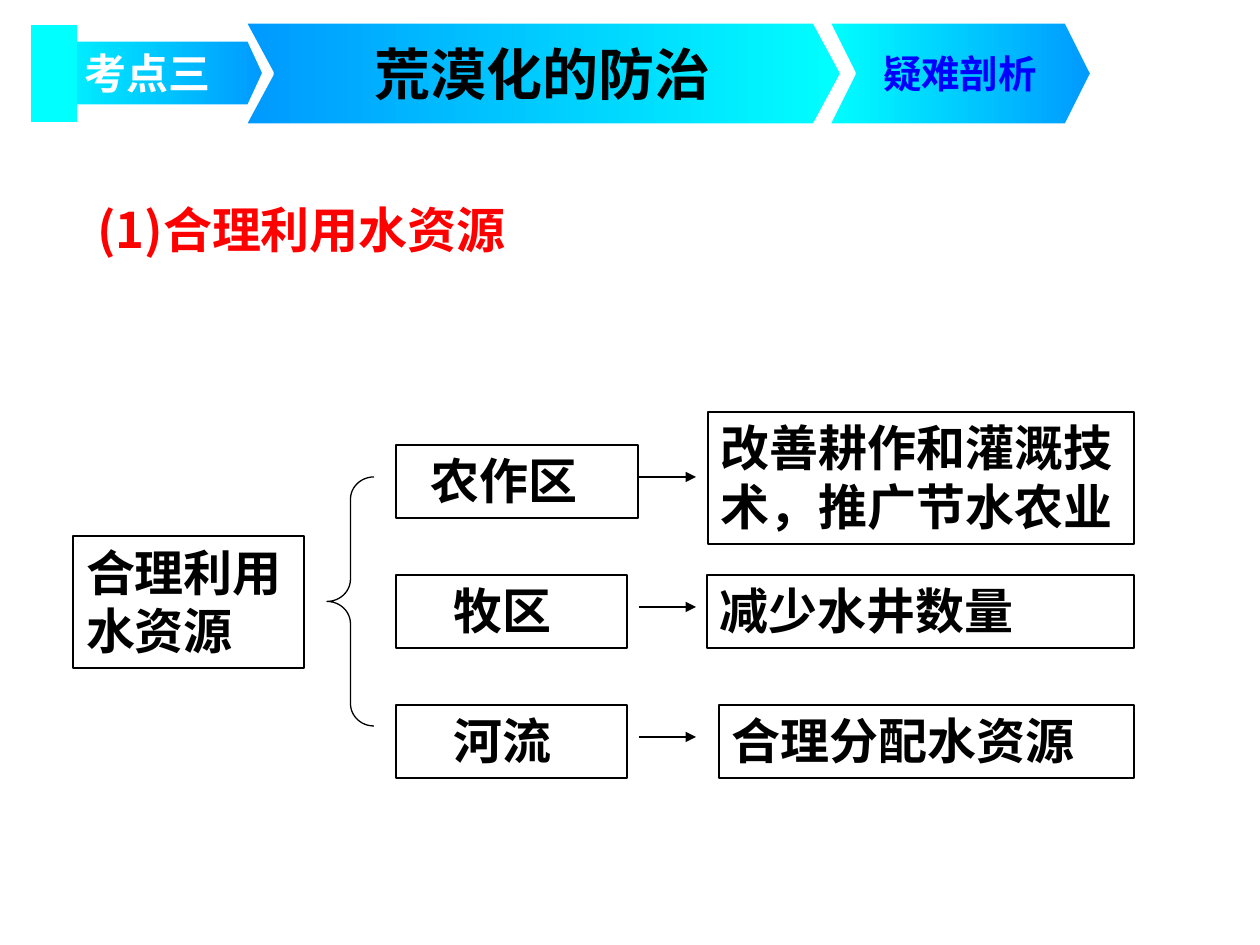
from lxml import etree
from pptx import Presentation
from pptx.dml.color import RGBColor
from pptx.enum.shapes import MSO_CONNECTOR, MSO_SHAPE
from pptx.enum.text import MSO_ANCHOR, PP_ALIGN
from pptx.oxml.ns import qn
from pptx.util import Pt

PX = 914400 / 126
RECTANGLE, CHEVRON, BRACE = MSO_SHAPE.RECTANGLE, MSO_SHAPE.CHEVRON, MSO_SHAPE.LEFT_BRACE
LEFT, CENTER = PP_ALIGN.LEFT, PP_ALIGN.CENTER
TOP, MIDDLE = MSO_ANCHOR.TOP, MSO_ANCHOR.MIDDLE
SERIF, SANS, CJK = "Times New Roman", "Arial", "Noto Sans CJK SC"
BLACK, WHITE, RED = "000000", "FFFFFF", "FF0000"
BLUE, SKY, CYAN = "0000FF", "0099FF", "00FFFF"


def px(length):
    return round(length * PX)


def color(value):
    return RGBColor.from_string(value)


def set_line(line, value, width):
    line.color.rgb = color(value)
    line.width = Pt(width)


def set_text(shape, text, size, font, value, align=LEFT, anchor=TOP, wrap=True, indent=0):
    frame = shape.text_frame
    frame.text = text
    frame.word_wrap = wrap
    frame.vertical_anchor = anchor
    frame.margin_left = px(13 + indent)
    frame.margin_right = px(13)
    frame.margin_top = frame.margin_bottom = px(6)
    paragraph = frame.paragraphs[0]
    paragraph.alignment = align
    paragraph.font.size = Pt(size)
    paragraph.font.bold = True
    paragraph.font.name = font
    paragraph.font.color.rgb = color(value)


def add_shape(slide, kind, left, top, width, height):
    shape = slide.shapes.add_shape(kind, px(left), px(top), px(width), px(height))
    shape.shadow.inherit = False
    return shape


def add_box(slide, left, top, width, height, text, indent=0):
    box = add_shape(slide, RECTANGLE, left, top, width, height)
    box.fill.background()
    set_line(box.line, BLACK, 0.75)
    set_text(box, text, 28, SERIF, BLACK, indent=indent)


def add_arrow(slide, left, right, y):
    arrow = slide.shapes.add_connector(
        MSO_CONNECTOR.STRAIGHT, px(left), px(y), px(right), px(y))
    set_line(arrow.line, BLACK, 0.75)
    etree.SubElement(arrow.line._get_or_add_ln(), qn("a:tailEnd"), type="triangle")
    etree.SubElement(arrow._element.spPr, qn("a:effectLst"))


def add_chevron(slide, left, top, width, height, point, colors, text, size, font, value):
    chevron = add_shape(slide, CHEVRON, left, top, width, height)
    chevron.adjustments[0] = point
    chevron.fill.gradient()
    chevron.fill.gradient_angle = 0
    for stop, stop_color, position in zip(chevron.fill.gradient_stops, colors, (0, 1)):
        stop.color.rgb = color(stop_color)
        stop.position = position
    set_line(chevron.line, WHITE, 3)
    set_text(chevron, text, size, font, value, CENTER, MIDDLE, wrap=False)


def add_banner(slide, left, top):
    add_chevron(slide, left + 212, top, 600, 105, 0.27, (SKY, CYAN),
                "荒漠化的防治", 32, SERIF, BLACK)
    add_chevron(slide, left, top + 18, 234, 68, 0.23, (CYAN, SKY),
                "考点三", 24, CJK, WHITE)
    tab = add_shape(slide, RECTANGLE, left, top + 4, 46, 97)
    tab.fill.solid()
    tab.fill.fore_color.rgb = color(CYAN)
    tab.line.fill.background()
    add_chevron(slide, left + 796, top, 266, 105, 0.25, (CYAN, SKY),
                "疑难剖析", 22, SANS, BLUE)


def add_heading(slide, left, top, width, height):
    title = slide.shapes.title
    title.left, title.top, title.width, title.height = map(px, (left, top, width, height))
    set_text(title, "(1)合理利用水资源", 28, CJK, RED, CENTER)


def add_measures(slide, left, top):
    """Tree from the goal through three areas to the measure for each."""
    row_height, row_step, right = 73, 130, 1061
    add_box(slide, left, top + 124, 231, 132, "合理利用水资源")
    brace = add_shape(slide, BRACE, left + 254, top + 65, 47, 249)
    brace.adjustments[0] = 0.475
    brace.adjustments[1] = 0.5
    brace.fill.background()
    set_line(brace.line, BLACK, 0.75)

    # area, its width and indent, then measure, its left, rise and height
    rows = [
        ("农作区", 242, 22, "改善耕作和灌溉技术，推广节水农业", 635, 33, 132),
        ("牧区", 231, 45, "减少水井数量", 634, 0, row_height),
        ("河流", 231, 45, "合理分配水资源", 646, 0, row_height),
    ]
    for index, (area, width, indent, measure, start, rise, height) in enumerate(rows):
        y = top + 33 + index * row_step
        add_box(slide, left + 323, y, width, row_height, area, indent)
        add_box(slide, left + start, y - rise, right - start, height, measure)
        add_arrow(slide, left + 566, left + 623, y + 32)


def main():
    presentation = Presentation()
    presentation.slide_width, presentation.slide_height = px(1260), px(945)
    slide = presentation.slides.add_slide(presentation.slide_layouts[5])
    add_measures(slide, 73, 412)
    add_heading(slide, 15, 193, 573, 72)
    add_banner(slide, 31, 21)
    presentation.save("out.pptx")


if __name__ == "__main__":
    main()
